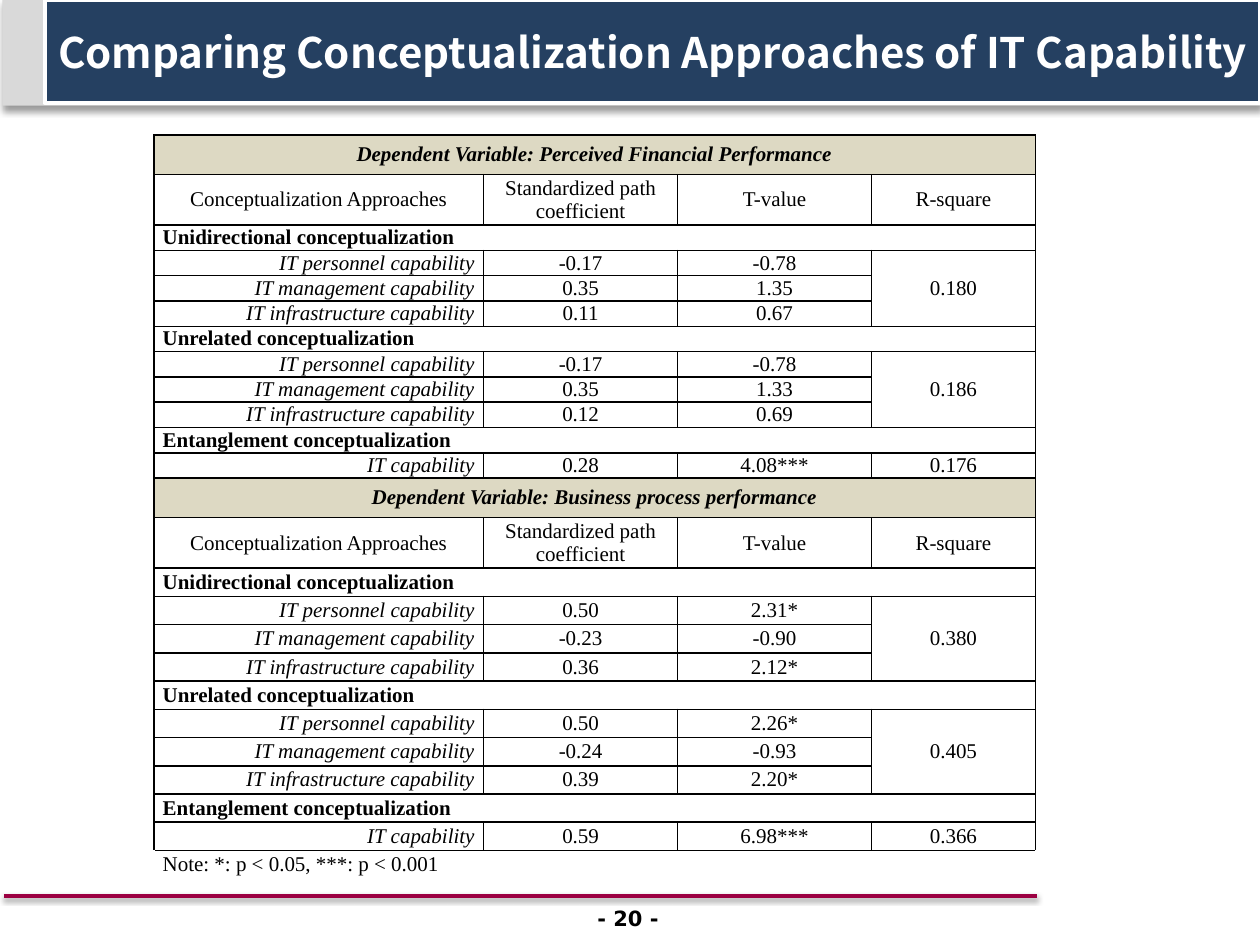
"""Build a slide comparing conceptualization approaches of IT capability."""
from lxml import etree
from pptx import Presentation
from pptx.dml.color import RGBColor
from pptx.enum import shapes, text
from pptx.oxml import ns
from pptx.util import Cm, Pt

COLORS = {"band": "DDD9C3", "navy": "254061", "grey": "D9D9D9",
          "rule": "9C0042", "white": "FFFFFF", "black": "000000"}
TITLE = "Comparing Conceptualization Approaches of IT Capability"
PAGE_LABEL = "- 20 -"
NOTE = "Note: *: p < 0.05, ***: p < 0.001"
HEADINGS = ["Conceptualization Approaches", "Standardized path\ncoefficient",
            "T-value", "R-square"]
CAPABILITIES = ["IT personnel capability", "IT management capability",
                "IT infrastructure capability"]
APPROACHES = [("Unidirectional conceptualization", CAPABILITIES),
              ("Unrelated conceptualization", CAPABILITIES),
              ("Entanglement conceptualization", ["IT capability"])]
RESULTS = [
    ("Dependent Variable: Perceived Financial Performance", 0.51, [
        ([("-0.17", "-0.78"), ("0.35", "1.35"), ("0.11", "0.67")], "0.180"),
        ([("-0.17", "-0.78"), ("0.35", "1.33"), ("0.12", "0.69")], "0.186"),
        ([("0.28", "4.08***")], "0.176")]),
    ("Dependent Variable: Business process performance", 0.57, [
        ([("0.50", "2.31*"), ("-0.23", "-0.90"), ("0.36", "2.12*")], "0.380"),
        ([("0.50", "2.26*"), ("-0.24", "-0.93"), ("0.39", "2.20*")], "0.405"),
        ([("0.59", "6.98***")], "0.366")]),
]
COLUMN_WIDTHS = [6.65, 3.91, 3.91, 3.3]
BAND_HEIGHT, HEADING_HEIGHT, NOTE_HEIGHT = 0.8, 0.94, 0.57
LEFT, CENTER, RIGHT = text.PP_ALIGN.LEFT, text.PP_ALIGN.CENTER, text.PP_ALIGN.RIGHT


def color(name):
    return RGBColor.from_string(COLORS[name])


def add_element(parent, tag, **attributes):
    return etree.SubElement(parent, ns.qn(tag),
                            {key: str(value) for key, value in attributes.items()})


def style(frame, font_name, size, color_name="black", align=LEFT, bold=False, italic=False):
    for paragraph in frame.paragraphs:
        paragraph.alignment = align
        font = paragraph.font
        font.name, font.size, font.bold, font.italic = font_name, Pt(size), bold, italic
        font.color.rgb = color(color_name)


def drop_shadow(part, blur, distance, opacity):
    effects = add_element(part._element.spPr, "a:effectLst")
    shadow = add_element(effects, "a:outerShdw", blurRad=Pt(blur), dist=Pt(distance),
                         dir=5400000, algn="t", rotWithShape=0)
    tint = add_element(shadow, "a:srgbClr", val=COLORS["black"])
    add_element(tint, "a:alpha", val=opacity * 1000)


def add_border(cell, side):
    line = add_element(cell._tc.get_or_add_tcPr(), f"a:ln{side}", w=Pt(1))
    add_element(add_element(line, "a:solidFill"), "a:srgbClr", val=COLORS["black"])


def table_rows():
    """Return rows as (height, cell texts, kind) and the R-square spans."""
    rows, spans = [], []
    for outcome, height, groups in RESULTS:
        rows.append((BAND_HEIGHT, [outcome], "band"))
        rows.append((HEADING_HEIGHT, HEADINGS, "heading"))
        for (approach, capabilities), (estimates, r_square) in zip(APPROACHES, groups):
            rows.append((height, [approach], "approach"))
            spans.append((len(rows), len(rows) + len(estimates) - 1))
            for index, (capability, estimate) in enumerate(zip(capabilities, estimates)):
                fit = "" if index else r_square
                rows.append((height, [capability, *estimate, fit], "result"))
    rows.append((NOTE_HEIGHT, [NOTE], "note"))
    return rows, spans


def add_results_table(slide):
    rows, spans = table_rows()
    table = slide.shapes.add_table(
        len(rows), len(COLUMN_WIDTHS), Cm(3.1), Cm(2.72), Cm(sum(COLUMN_WIDTHS)),
        Cm(sum(height for height, _, _ in rows))).table
    table.first_row = table.horz_banding = False
    for column, width in zip(table.columns, COLUMN_WIDTHS):
        column.width = Cm(width)
    for row_index, (height, texts, kind) in enumerate(rows):
        table.rows[row_index].height = Cm(height)
        for column_index in range(len(COLUMN_WIDTHS)):
            cell = table.cell(row_index, column_index)
            if column_index < len(texts):
                cell.text = texts[column_index]
            is_label = kind == "result" and column_index == 0
            align = RIGHT if is_label else LEFT if kind in ("approach", "note") else CENTER
            style(cell.text_frame, "Times New Roman", 12, align=align,
                  bold=kind in ("band", "approach"), italic=kind == "band" or is_label)
            cell.vertical_anchor = text.MSO_ANCHOR.MIDDLE
            cell.margin_left = cell.margin_right = Cm(0.18)
            cell.margin_top = cell.margin_bottom = 0
            for side in "T" if kind == "note" else "LRTB":
                add_border(cell, side)
            if kind == "band":
                cell.fill.solid()
                cell.fill.fore_color.rgb = color("band")
            else:
                cell.fill.background()
        if len(texts) == 1:
            table.cell(row_index, 0).merge(table.cell(row_index, len(COLUMN_WIDTHS) - 1))
    for first, last in spans:
        if last > first:
            table.cell(first, 3).merge(table.cell(last, 3))


def main():
    deck = Presentation()
    deck.slide_width, deck.slide_height = Cm(25.4), Cm(19.05)
    slide = deck.slides.add_slide(deck.slide_layouts[6])

    backdrop = slide.shapes.add_shape(shapes.MSO_SHAPE.ROUNDED_RECTANGLE,
                                      Cm(0.05), Cm(-0.03), Cm(25.4), Cm(2.16))
    backdrop.adjustments[0] = 0
    backdrop.fill.solid()
    backdrop.fill.fore_color.rgb = color("grey")
    backdrop.line.fill.background()
    drop_shadow(backdrop, 4, 3, 40)

    footer_rule = slide.shapes.add_connector(shapes.MSO_CONNECTOR.STRAIGHT,
                                             Cm(0.08), Cm(18.06), Cm(20.9), Cm(18.06))
    footer_rule.line.color.rgb = color("rule")
    footer_rule.line.width = Pt(2)
    drop_shadow(footer_rule, 3.1, 1.6, 38)

    title = slide.shapes.add_shape(shapes.MSO_SHAPE.RECTANGLE,
                                   Cm(0.9), 0, Cm(24.5), Cm(2.08))
    title.shadow.inherit = False
    title.fill.solid()
    title.fill.fore_color.rgb = color("navy")
    title.line.color.rgb = color("white")
    title.line.width = Pt(2.25)
    title.text_frame.text = TITLE
    title.text_frame.word_wrap = False
    title.text_frame.vertical_anchor = text.MSO_ANCHOR.MIDDLE
    style(title.text_frame, "Noto Sans CJK KR", 24, "white", CENTER, bold=True)
    fonts = title.text_frame.paragraphs[0].font._element
    add_element(fonts, "a:ea", typeface="Noto Sans CJK KR")

    page_number = slide.shapes.add_textbox(Cm(9.7), Cm(18.14), Cm(5.92), Cm(0.71))
    page_number.text_frame.text = PAGE_LABEL
    page_number.text_frame.word_wrap = True
    style(page_number.text_frame, "DejaVu Sans", 12, align=CENTER, bold=True)

    add_results_table(slide)
    deck.save("out.pptx")


if __name__ == "__main__":
    main()
